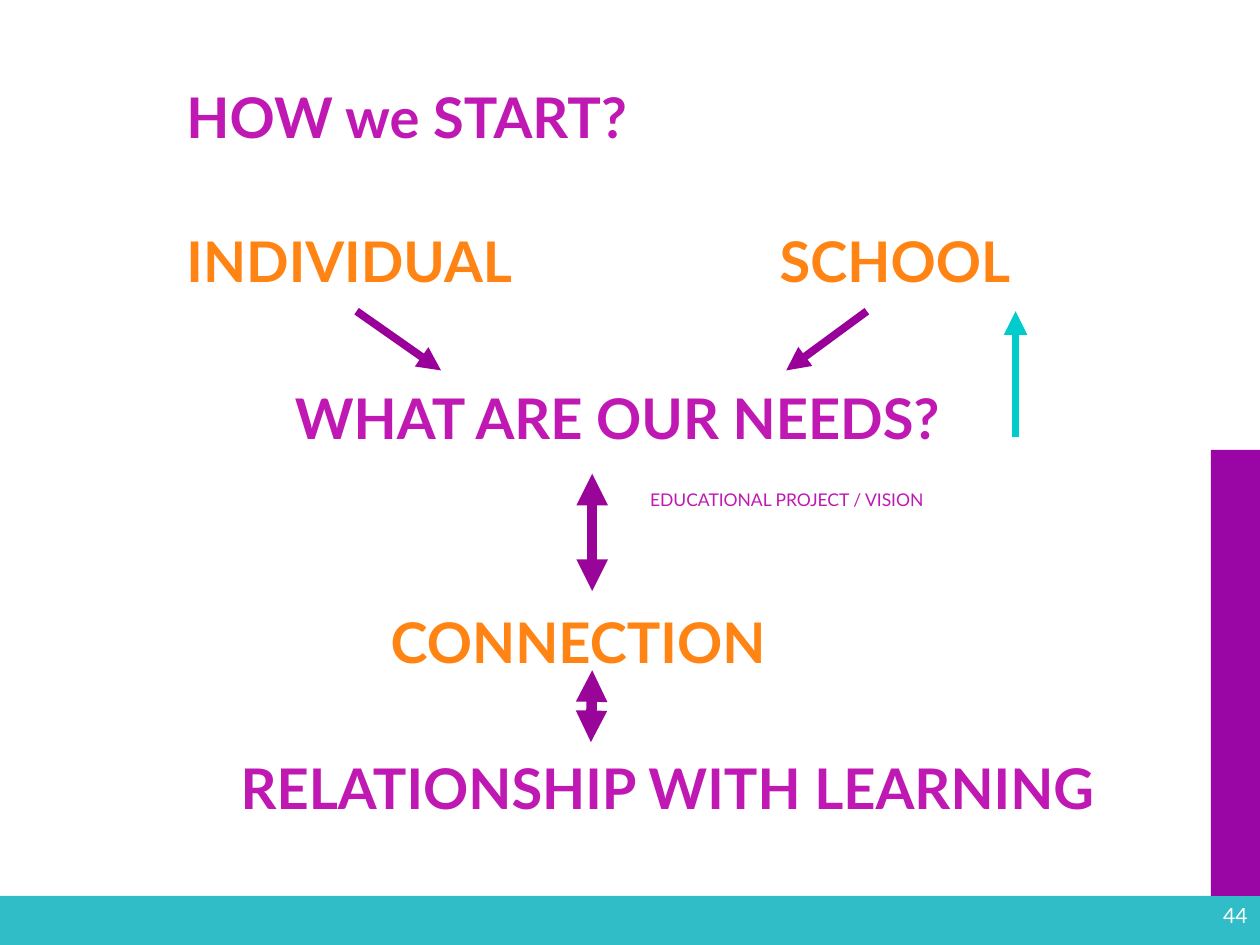
from dataclasses import dataclass

from lxml import etree
from pptx import Presentation
from pptx import util as u
from pptx.dml.color import RGBColor
from pptx.enum import shapes, text
from pptx.oxml import ns


@dataclass(frozen=True)
class Theme:
    font: str = "Lato"
    white: str = "FFFFFF"
    teal: str = "30BDC7"
    plum: str = "9A05A5"
    magenta: str = "BF18B3"
    orange: str = "FF8414"
    purple: str = "990099"
    violet: str = "990599"
    turquoise: str = "00CCCC"
    heading: int = 32
    number: int = 12
    caption: int = 10


class SlideBuilder:
    """Holds the theme and the slide being built."""

    def __init__(self, slide, theme):
        self.slide = slide
        self.theme = theme

    def place(self, shape, left, top, width, height):
        shape.left, shape.top = u.Inches(left), u.Inches(top)
        shape.width, shape.height = u.Inches(width), u.Inches(height)

    def style(self, para, size, color):
        para.font.name = self.theme.font
        para.font.size = u.Pt(size)
        para.font.bold = size == self.theme.heading
        para.font.color.rgb = RGBColor.from_string(color)

    def band(self, left, top, width, height, color):
        band = self.slide.shapes.add_shape(
            shapes.MSO_SHAPE.RECTANGLE, *map(u.Inches, (left, top, width, height)))
        band.shadow.inherit = False
        band.fill.solid()
        band.fill.fore_color.rgb = RGBColor.from_string(color)
        band.line.fill.background()

    def title(self, words, *bounds):
        box = self.slide.shapes.title
        self.place(box, *bounds)
        frame = box.text_frame
        frame.auto_size = text.MSO_AUTO_SIZE.NONE
        frame.vertical_anchor = text.MSO_ANCHOR.MIDDLE
        para = frame.paragraphs[0]
        para.text = words
        para.alignment = text.PP_ALIGN.LEFT
        self.style(para, self.theme.heading, self.theme.magenta)

    def body(self, lines, *bounds):
        """Each line: words, indent, space before, size, colour."""
        box = self.slide.placeholders[1]
        self.place(box, *bounds)
        frame = box.text_frame
        frame.auto_size = text.MSO_AUTO_SIZE.NONE
        for index, (words, indent, gap, size, color) in enumerate(lines):
            para = frame.add_paragraph() if index else frame.paragraphs[0]
            para.text = words
            props = para._p.get_or_add_pPr()
            props.set("marL", str(u.Inches(indent)))
            props.set("indent", "0")
            etree.SubElement(props, ns.qn("a:buNone"))
            para.space_before = u.Pt(gap)
            self.style(para, size, color)

    def label(self, words, bounds, size, color,
              align=text.PP_ALIGN.LEFT, anchor=text.MSO_ANCHOR.TOP):
        box = self.slide.shapes.add_textbox(*map(u.Inches, bounds))
        frame = box.text_frame
        frame.word_wrap = True
        frame.vertical_anchor = anchor
        para = frame.paragraphs[0]
        para.text = words
        para.alignment = align
        self.style(para, size, color)

    def arrow(self, start, end, color, width, double=False):
        arrow = self.slide.shapes.add_connector(
            shapes.MSO_CONNECTOR.STRAIGHT, *map(u.Inches, start + end))
        arrow.line.color.rgb = RGBColor.from_string(color)
        arrow.line.width = u.Pt(width)
        line = arrow.line._get_or_add_ln()
        for tag in ("a:headEnd", "a:tailEnd") if double else ("a:tailEnd",):
            etree.SubElement(line, ns.qn(tag), type="triangle")
        etree.SubElement(arrow._element.spPr, ns.qn("a:effectLst"))


def main():
    deck = Presentation()
    deck.slide_width, deck.slide_height = u.Inches(10), u.Inches(7.5)
    theme = Theme()
    page = SlideBuilder(deck.slides.add_slide(deck.slide_layouts[1]), theme)

    # Frame bands and page number
    page.band(0, 7.11, 10, 0.39, theme.teal)
    page.band(9.61, 3.57, 0.39, 3.54, theme.plum)
    page.label("44", (7.67, 7.03, 2.33, 0.47), theme.number, theme.white,
               text.PP_ALIGN.RIGHT, text.MSO_ANCHOR.MIDDLE)

    # Title and the words of the diagram
    page.title("HOW we START?", 1.38, 0.3, 8.12, 1.25)
    page.body([
        ("INDIVIDUAL", 0, 0, theme.heading, theme.orange),
        ("WHAT ARE OUR NEEDS?", 0.86, 51.4, theme.heading, theme.magenta),
        ("EDUCATIONAL PROJECT / VISION", 3.68, 21.5,
         theme.caption, theme.magenta),
        ("CONNECTION", 1.62, 56, theme.heading, theme.orange),
        ("RELATIONSHIP WITH LEARNING", 0.43, 45, theme.heading, theme.magenta),
    ], 1.38, 1.75, 8.12, 4.95)
    page.label("SCHOOL", (6.09, 1.75, 2.2, 0.63), theme.heading, theme.orange)

    # Arrows into the needs and back to the school
    page.arrow((2.83, 2.47), (3.5, 2.94), theme.purple, 4.5)
    page.arrow((6.88, 2.47), (6.24, 2.94), theme.purple, 4.5)
    page.arrow((8.06, 3.47), (8.06, 2.47), theme.turquoise, 4.5)

    # Two-way arrows down the middle
    page.arrow((4.7, 3.76), (4.7, 4.69), theme.violet, 6, double=True)
    page.arrow((4.7, 5.32), (4.69, 5.89), theme.violet, 6, double=True)

    deck.save("out.pptx")


if __name__ == "__main__":
    main()
